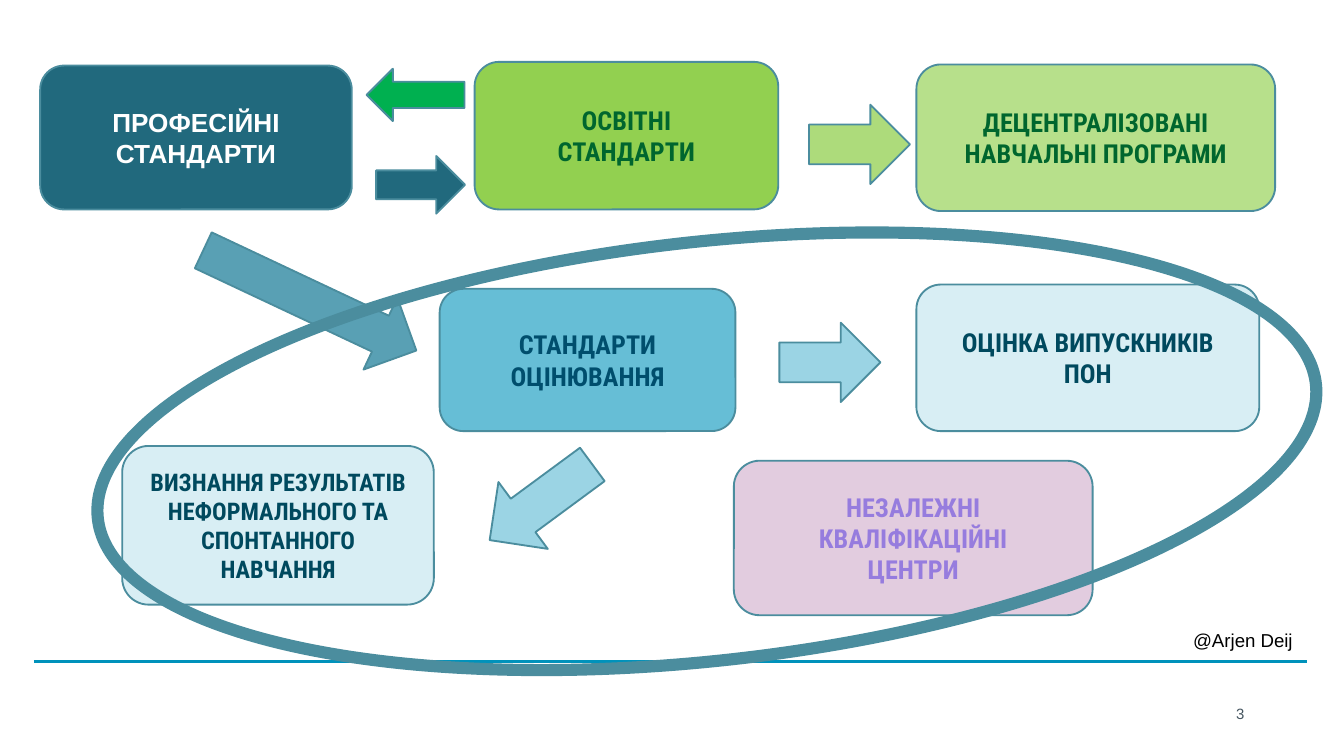
from lxml import etree
from pptx import Presentation
from pptx.dml.color import RGBColor
from pptx.enum.shapes import MSO_CONNECTOR, MSO_SHAPE
from pptx.enum.text import MSO_ANCHOR, PP_ALIGN
from pptx.oxml.ns import qn
from pptx.util import Cm, Pt

ROUND = MSO_SHAPE.ROUNDED_RECTANGLE
LEFT = MSO_SHAPE.LEFT_ARROW
RIGHT = MSO_SHAPE.RIGHT_ARROW
OVAL = MSO_SHAPE.OVAL
LINE = MSO_CONNECTOR.STRAIGHT
MIDDLE = MSO_ANCHOR.MIDDLE
TOP = MSO_ANCHOR.TOP
CENTER = PP_ALIGN.CENTER
START = PP_ALIGN.LEFT
END = PP_ALIGN.RIGHT

EDGE = "4B8D9E"
GREEN = "92D050"
BLUE = "66BED6"
TEAL = "21697D"
DARK = "00495E"
MOSS = "00662E"
SANS = "Arial"
NARROW = "Roboto Condensed"

# place (cm), fill, opacity %, paragraphs, font, size, text colour
BOXES = [
    ((0.76, 1.24, 5.89, 2.72), TEAL, 100,
     ["ПРОФЕСІЙНІ СТАНДАРТИ"], SANS, 14, "FFFFFF"),
    ((17.32, 1.22, 6.78, 2.77), GREEN, 66,
     ["ДЕЦЕНТРАЛІЗОВАНІ НАВЧАЛЬНІ ПРОГРАМИ"], NARROW, 14, MOSS),
    ((8.31, 5.46, 5.59, 2.69), BLUE, 100,
     ["СТАНДАРТИ ОЦІНЮВАННЯ"], NARROW, 14, "004E6D"),
    ((2.31, 8.43, 5.89, 3), BLUE, 25,
     ["ВИЗНАННЯ РЕЗУЛЬТАТІВ НЕФОРМАЛЬНОГО ТА СПОНТАННОГО НАВЧАННЯ"],
     NARROW, 13, DARK),
    ((17.32, 5.38, 6.48, 2.77), BLUE, 25,
     ["ОЦІНКА ВИПУСКНИКІВ ПОН"], NARROW, 14, DARK),
    ((13.87, 8.71, 6.78, 2.92), "E2CCDF", 100,
     ["НЕЗАЛЕЖНІ КВАЛІФІКАЦІЙНІ", "ЦЕНТРИ"], NARROW, 14, "967CDE"),
    ((8.97, 1.17, 5.74, 2.79), GREEN, 100,
     ["ОСВІТНІ", "СТАНДАРТИ"], NARROW, 14, MOSS),
]

# kind, place (cm), fill, opacity %, rotation
ARROWS = [
    (LEFT, (6.93, 1.3, 1.85, 0.99), "00B050", 100, 0),
    (RIGHT, (7.11, 2.95, 1.68, 1.09), TEAL, 100, 0),
    (RIGHT, (15.29, 1.98, 1.91, 1.5), GREEN, 75, 0),
    (RIGHT, (14.73, 6.1, 1.91, 1.5), BLUE, 65, 0),
    (LEFT, (9.02, 8.71, 2.41, 1.57), BLUE, 65, 323.6),
    (RIGHT, (3.63, 4.93, 4.45, 1.5), "006E8C", 65, 25.2),
]


def color(code):
    return RGBColor.from_string(code)


def scale(place):
    return [Cm(n) for n in place]


def add_form(slide, kind, place, fill=None, alpha=100, turn=0, width=1):
    """Add an outlined preset shape; no fill code leaves it hollow."""
    form = slide.shapes.add_shape(kind, *scale(place))
    form.shadow.inherit = False
    form.rotation = turn
    form.line.color.rgb = color(EDGE)
    form.line.width = Pt(width)
    if fill is None:
        form.fill.background()
        return form
    form.fill.solid()
    form.fill.fore_color.rgb = color(fill)
    if alpha < 100:
        tint = form.fill._xPr.find(".//" + qn("a:srgbClr"))
        etree.SubElement(tint, qn("a:alpha"), val=str(alpha * 1000))
    return form


def write(frame, lines, face, size, ink, align, bold=False, anchor=MIDDLE):
    frame.word_wrap = True
    frame.vertical_anchor = anchor
    for i, line in enumerate(lines):
        para = frame.add_paragraph() if i else frame.paragraphs[0]
        para.alignment = align
        run = para.add_run()
        run.text = line
        run.font.name = face
        run.font.size = Pt(size)
        run.font.bold = bold
        run.font.color.rgb = color(ink)


def add_box(slide, place, fill, alpha, lines, face, size, ink):
    box = add_form(slide, ROUND, place, fill, alpha)
    write(box.text_frame, lines, face, size, ink, CENTER, bold=True)


def add_label(slide, place, text, size, ink, align, anchor):
    label = slide.shapes.add_textbox(*scale(place))
    write(label.text_frame, [text], SANS, size, ink, align, anchor=anchor)


def add_rule(slide, ends, ink, width):
    rule = slide.shapes.add_connector(LINE, *scale(ends))
    rule.line.color.rgb = color(ink)
    rule.line.width = Pt(width)
    etree.SubElement(rule._element.spPr, qn("a:effectLst"))


def main():
    deck = Presentation()
    deck.slide_width, deck.slide_height = Cm(25.4), Cm(14.29)
    slide = deck.slides.add_slide(deck.slide_layouts[6])

    add_rule(slide, (0.64, 12.5, 24.71, 12.5), "0092BB", 1.75)
    add_label(slide, (19.38, 13.11, 4.39, 0.76), "3", 8, "455560", END, MIDDLE)
    for box in BOXES:
        add_box(slide, *box)
    for arrow in ARROWS:
        add_form(slide, *arrow)
    add_form(slide, OVAL, (1.78, 4.57, 23.16, 7.92), turn=353.7, width=6.5)
    add_label(slide, (22.3, 11.76, 3.02, 0.69), "@Arjen Deij", 10, "000000",
              START, TOP)

    deck.save("out.pptx")


if __name__ == "__main__":
    main()
